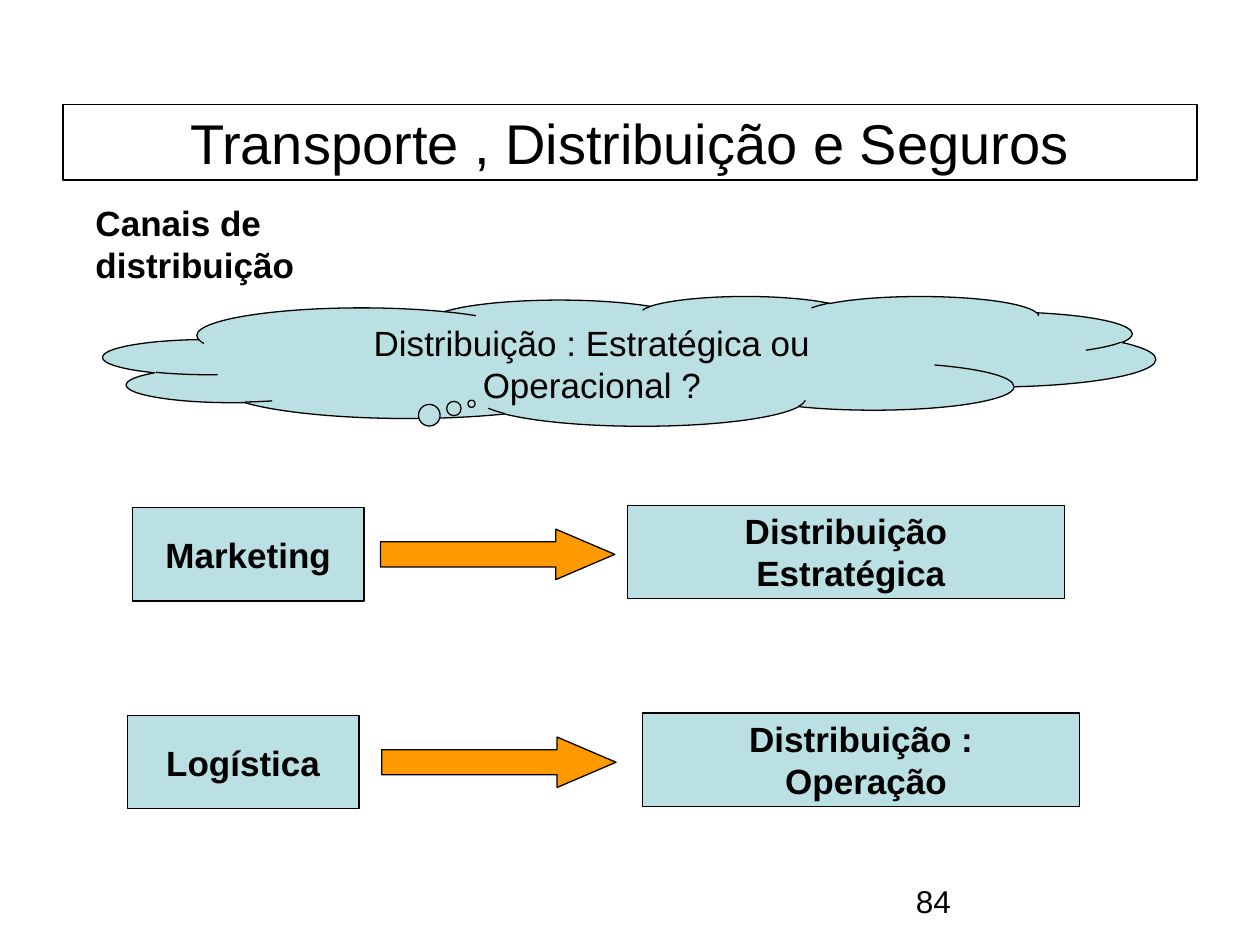
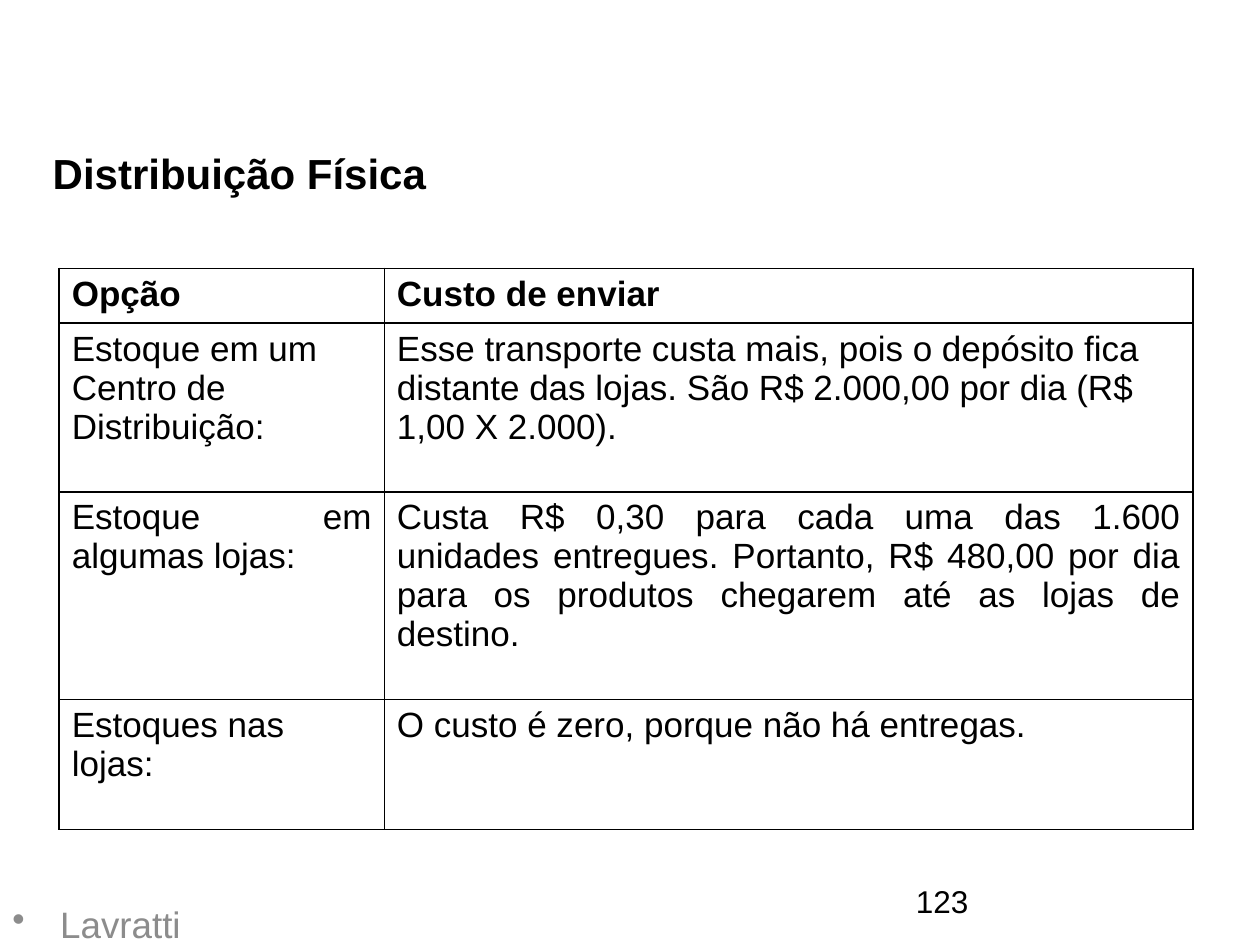
from dataclasses import dataclass

from lxml import etree
from pptx import Presentation
from pptx import util as u
from pptx.dml.color import RGBColor
from pptx.enum import shapes, text
from pptx.oxml.ns import qn

KIND = shapes.MSO_SHAPE
ALIGN = text.PP_ALIGN
ANCHOR = text.MSO_ANCHOR


@dataclass(frozen=True)
class Theme:
    """Colours, type sizes and line widths of the deck."""
    face: str = "Arial"
    ink: str = "000000"
    paper: str = "FFFFFF"
    pale: str = "BBE0E3"
    amber: str = "FF9900"
    grey: str = "8C8C8C"
    title: int = 32
    head: int = 24
    foot: int = 21
    body: int = 20
    page: int = 18
    line: float = 0.75
    rule: float = 1


def paint(code):
    """Turn a hex code into a colour."""
    return RGBColor.from_string(code)


def write(frame, words, look, size=None, color=None, bold=False,
          align=ALIGN.LEFT, anchor=ANCHOR.TOP, bullet=None, hang=0):
    """Fill a text frame, one paragraph for each line of words."""
    frame.word_wrap = True
    frame.vertical_anchor = anchor
    frame.text = words
    for para in frame.paragraphs:
        para.alignment = align
        if bullet:
            props = para._p.get_or_add_pPr()
            props.set("marL", str(u.Inches(hang)))
            props.set("indent", str(-u.Inches(hang)))
            etree.SubElement(props, qn("a:buChar")).set("char", bullet)
        for run in para.runs:
            font = run.font
            font.name = look.face
            font.size = u.Pt(size or look.body)
            font.bold = bold
            font.color.rgb = paint(color or look.ink)


class Deck:
    """Draw on the current slide, on a grid of 100 columns by 75 rows."""
    COLS, ROWS = 100, 75

    def __init__(self, look):
        """Open a deck of 10 by 7.5 inches."""
        self.look = look
        self.show = Presentation()
        self.show.slide_width = u.Inches(10)
        self.show.slide_height = u.Inches(7.5)
        self.slide = None

    def span(self, cols):
        """Give the width of some columns."""
        return round(self.show.slide_width * cols / self.COLS)

    def rise(self, rows):
        """Give the height of some rows."""
        return round(self.show.slide_height * rows / self.ROWS)

    def place(self, box):
        """Turn grid left, top, width and height into lengths."""
        left, top, width, height = box
        return self.span(left), self.rise(top), self.span(width), self.rise(height)

    def page(self, number):
        """Start a blank slide with its page number."""
        self.slide = self.show.slides.add_slide(self.show.slide_layouts[6])
        self.label((71.7, 69.5, 23.3, 4), number, size=self.look.page)

    def label(self, box, words, **form):
        """Add a plain text box."""
        item = self.slide.shapes.add_textbox(*self.place(box))
        write(item.text_frame, words, self.look, **form)

    def shape(self, kind, box, fill, words="", tune=(), **form):
        """Add an outlined preset shape with optional text."""
        item = self.slide.shapes.add_shape(kind, *self.place(box))
        item.shadow.inherit = False
        item.fill.solid()
        item.fill.fore_color.rgb = paint(fill)
        item.line.color.rgb = paint(self.look.ink)
        item.line.width = u.Pt(self.look.line)
        for spot, value in enumerate(tune):
            item.adjustments[spot] = value
        if words:
            write(item.text_frame, words, self.look, align=ALIGN.CENTER, **form)

    def edge(self, cell):
        """Rule all four sides of a cell."""
        props = cell._tc.get_or_add_tcPr()
        for spot, side in enumerate(("lnL", "lnR", "lnT", "lnB")):
            line = etree.Element(qn(f"a:{side}"), w=str(u.Pt(self.look.rule)))
            fill = etree.SubElement(line, qn("a:solidFill"))
            etree.SubElement(fill, qn("a:srgbClr"), val=self.look.ink)
            props.insert(spot, line)

    def table(self, left, top, cols, rows, data):
        """Add a ruled table; each row holds its alignment and its cells."""
        box = (left, top, sum(cols), sum(rows))
        grid = self.slide.shapes.add_table(
            len(rows), len(cols), *self.place(box)).table
        for col, width in zip(grid.columns, cols):
            col.width = self.span(width)
        for row, height, (align, *cells) in zip(grid.rows, rows, data):
            row.height = self.rise(height)
            for cell, words in zip(row.cells, cells):
                cell.fill.solid()
                cell.fill.fore_color.rgb = paint(self.look.paper)
                self.edge(cell)
                write(cell.text_frame, words, self.look, align=align,
                      bold=row is grid.rows[0] or cells is data[0][1:]
                      or words in data[0])


def channels(deck):
    """Draw the slide on distribution channels."""
    look = deck.look
    deck.page("84")
    deck.shape(KIND.RECTANGLE, (5, 8.3, 90, 6), look.paper,
               "Transporte , Distribuição e Seguros",
               size=look.title, anchor=ANCHOR.MIDDLE)
    deck.label((6.6, 15.5, 31.6, 7.4), "Canais de\vdistribuição", bold=True)
    deck.shape(KIND.CLOUD_CALLOUT, (8.2, 23.5, 83.5, 10.3), look.pale,
               "Distribuição : Estratégica ou Operacional ?",
               tune=(-0.15, 0.33))
    flows = (
        (10.5, 40.3, "Marketing", 30.2, 49.8, "Distribuição\n Estratégica"),
        (10.1, 56.8, "Logística", 30.3, 51, "Distribuição :\n Operação"),
    )
    for left, top, area, tail, right, role in flows:
        for box, words in (((left, top, 18.4, 7.4), area),
                           ((right, top - 0.2, 34.7, 7.4), role)):
            deck.shape(KIND.RECTANGLE, box, look.pale, words,
                       bold=True, anchor=ANCHOR.MIDDLE)
        deck.shape(KIND.RIGHT_ARROW, (tail, top + 1.7, 18.6, 4), look.amber,
                   tune=(0.5, 1.17))


def costs(deck):
    """Draw the slide on the cost of each stock option."""
    look = deck.look
    deck.page("123")
    deck.label((0, 71.7, 100, 3.3), "Lavratti", size=look.foot,
               color=look.grey, anchor=ANCHOR.MIDDLE, bullet="•", hang=0.38)
    deck.table(4.7, 21.3, (25.8, 64.2), (4.1, 13.4, 16.5, 10.3), (
        (ALIGN.LEFT, "Opção", "Custo de enviar"),
        (ALIGN.LEFT, "Estoque em um Centro de Distribuição:",
         "Esse transporte custa mais, pois o depósito fica distante das lojas. "
         "São R$ 2.000,00 por dia (R$ 1,00 X 2.000)."),
        (ALIGN.JUSTIFY, "Estoque em algumas lojas:",
         "Custa R$ 0,30 para cada uma das 1.600 unidades entregues. "
         "Portanto, R$ 480,00 por dia para os produtos chegarem até as lojas "
         "de destino."),
        (ALIGN.LEFT, "Estoques nas lojas:",
         "O custo é zero, porque não há entregas."),
    ))
    deck.label((3.2, 11.2, 40, 5), "Distribuição Física",
               size=look.head, bold=True)


def main():
    """Build and save the deck."""
    deck = Deck(Theme())
    channels(deck)
    costs(deck)
    deck.show.save("out.pptx")


if __name__ == "__main__":
    main()
